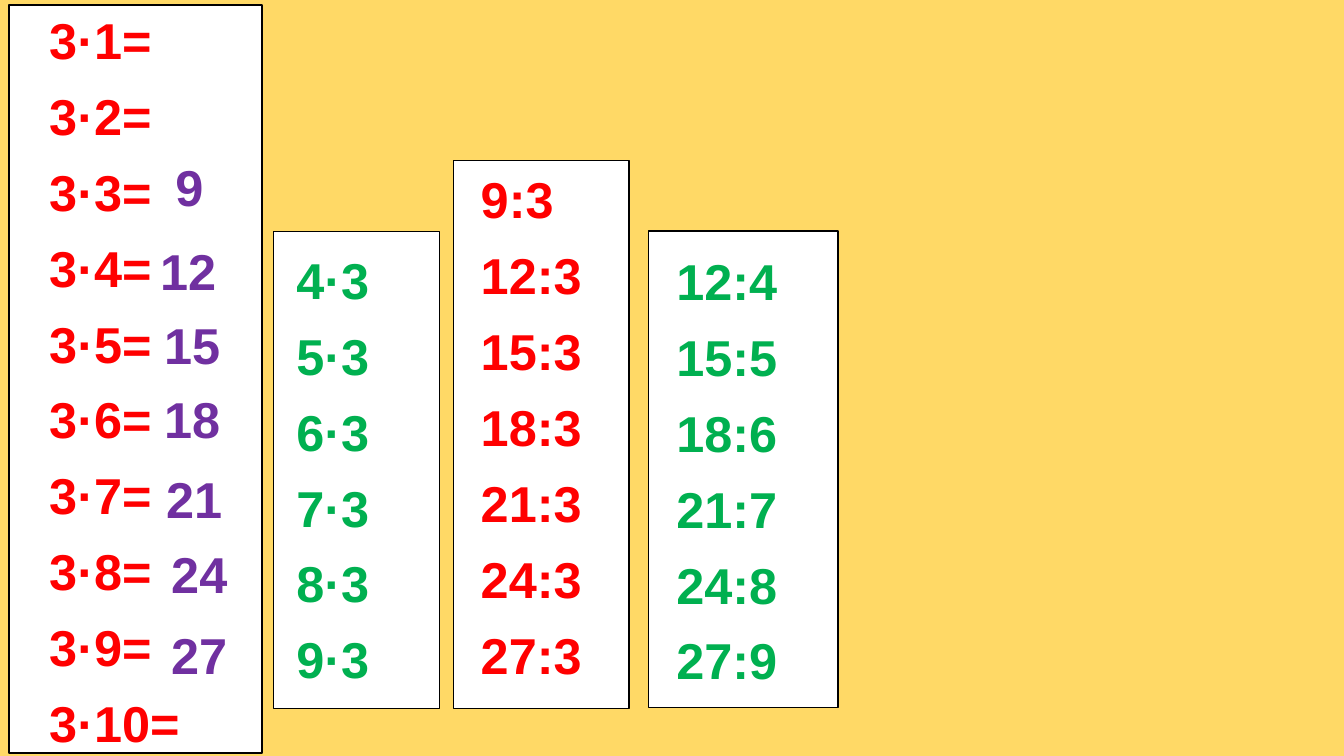
"""Build a slide of multiplication and division by three in four columns."""
from dataclasses import dataclass

from pptx import Presentation
from pptx.dml.color import RGBColor
from pptx.enum import shapes, text
from pptx.util import Inches, Pt

YELLOW = RGBColor(0xFF, 0xD9, 0x66)
WHITE = RGBColor(0xFF, 0xFF, 0xFF)
BLACK = RGBColor(0x00, 0x00, 0x00)
RED = RGBColor(0xFF, 0x00, 0x00)
GREEN = RGBColor(0x00, 0xB0, 0x50)
PURPLE = RGBColor(0x70, 0x30, 0xA0)

Box = tuple[float, float, float, float]


@dataclass(frozen=True)
class Column:
    """A framed column of exercises."""
    frame: Box
    area: Box
    exercises: list[str]
    color: RGBColor


@dataclass(frozen=True)
class Answer:
    """A result placed beside its exercise."""
    area: Box
    factor: int
    line_spacing: float = 1.07
    space_after: float = 8


COLUMNS = [
    Column((0.09, 0.05, 2.51, 7.42), (0.39, 0, 3.03, 7.52),
           [f"3·{n}=" for n in range(1, 11)], RED),
    Column((2.71, 2.3, 1.65, 4.73), (2.84, 2.38, 3.38, 4.55),
           [f"{n}·3" for n in range(4, 10)], GREEN),
    Column((4.5, 1.59, 1.74, 5.44), (4.67, 1.58, 1.76, 5.31),
           [f"{3 * n}:3" for n in range(3, 10)], RED),
    Column((6.43, 2.29, 1.88, 4.73), (6.61, 2.39, 1.69, 4.52),
           [f"{3 * n}:{n}" for n in range(4, 10)], GREEN),
]

ANSWERS = [
    Answer((1.64, 1.5, 0.52, 0.71), 3, line_spacing=1, space_after=0),
    Answer((1.49, 2.29, 1.35, 0.7), 4),
    Answer((1.53, 3.03, 1.13, 0.75), 5),
    Answer((1.53, 3.76, 1.66, 0.7), 6),
    Answer((1.55, 4.55, 1.35, 0.75), 7),
    Answer((1.6, 5.3, 0.88, 0.75), 8),
    Answer((1.6, 6.1, 1.37, 0.75), 9),
]


def write(slide, area: Box, lines: list[str], *, color: RGBColor,
          line_spacing: float = 1.07, space_after: float = 8) -> None:
    """Write bold lines in a text box."""
    frame = slide.shapes.add_textbox(*map(Inches, area)).text_frame
    frame.word_wrap = True
    frame.auto_size = text.MSO_AUTO_SIZE.SHAPE_TO_FIT_TEXT
    frame.text = "\n".join(lines)
    for paragraph in frame.paragraphs:
        paragraph.line_spacing = line_spacing
        paragraph.space_after = Pt(space_after)
        font = paragraph.runs[0].font
        font.name, font.size, font.bold = "Arial", Pt(36), True
        font.color.rgb = color


def draw_frame(slide, area: Box) -> None:
    """Draw the white panel behind a column."""
    panel = slide.shapes.add_shape(shapes.MSO_SHAPE.RECTANGLE, *map(Inches, area))
    panel.shadow.inherit = False
    panel.fill.solid()
    panel.fill.fore_color.rgb = WHITE
    panel.line.color.rgb = BLACK
    panel.line.width = Pt(1)


def draw_column(slide, column: Column) -> None:
    """Draw a panel and its exercises."""
    draw_frame(slide, column.frame)
    write(slide, column.area, column.exercises, color=column.color)


def draw_answer(slide, answer: Answer) -> None:
    """Write the product of three and the factor."""
    write(slide, answer.area, [str(3 * answer.factor)], color=PURPLE,
          line_spacing=answer.line_spacing, space_after=answer.space_after)


def main() -> None:
    """Build and save the slide."""
    deck = Presentation()
    deck.slide_width, deck.slide_height = Inches(13.33), Inches(7.5)
    slide = deck.slides.add_slide(deck.slide_layouts.get_by_name("Blank"))
    slide.background.fill.solid()
    slide.background.fill.fore_color.rgb = YELLOW
    for column in COLUMNS:
        draw_column(slide, column)
    for answer in ANSWERS:
        draw_answer(slide, answer)
    deck.save("out.pptx")


if __name__ == "__main__":
    main()
